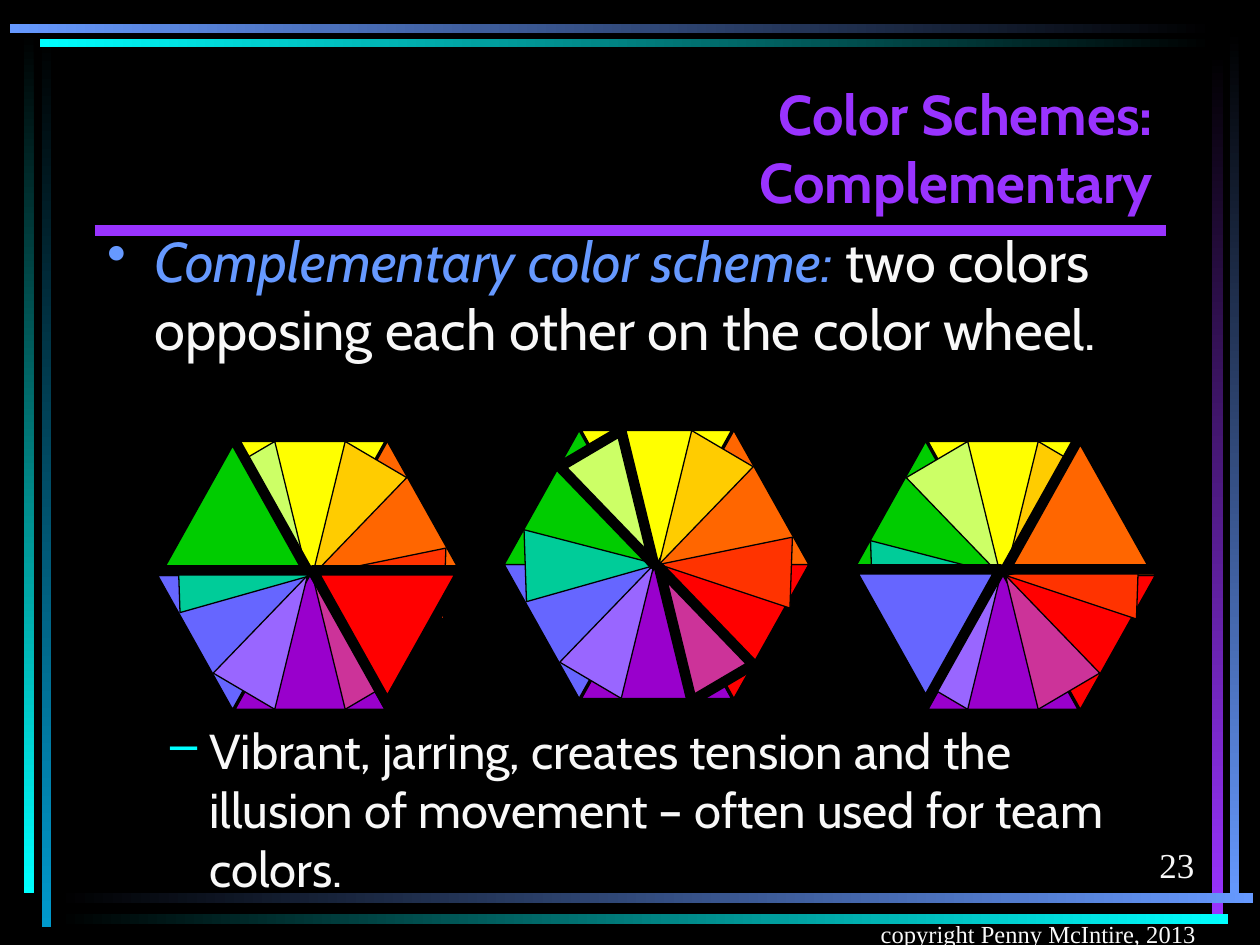
import lxml.etree
import pptx
import pptx.dml.color
import pptx.enum.shapes
import pptx.enum.text
import pptx.oxml.ns
import pptx.util
from pptx.util import Cm, Pt

SANS, SERIF = "Cabin", "Times New Roman"
BLACK, WHITE = "000000", "F8F8F8"
PURPLE, BLUE, CYAN, TEAL = "9933FF", "6699FF", "00FFFF", "0099CC"
RIGHT = pptx.enum.text.PP_ALIGN.RIGHT
BOTTOM = pptx.enum.text.MSO_ANCHOR.BOTTOM
TOP = pptx.enum.text.MSO_ANCHOR.TOP

# Triangles in cm from the wheel's centre, for the lower right quarter
SIDE = [(0.05, 0), (3.07, 0), (1.56, 2.7)]
POLE = [(-1.51, 2.7), (1.51, 2.7), (0, 0)]
MIXED = [(1.95, 1.97), (0.71, 2.7), (0.05, 0)]
MIXED_LEFT = [(-2.62, 0.75), (-2.67, -0.7), (0.03, 0)]
MIXED_RIGHT = [(2.74, -0.55), (2.69, 0.88), (0.05, 0)]

# Name: colour, triangle, mirror signs for x and y
PRIMARY = {
    "red": ("FF0000", SIDE, 1, 1),
    "yellow": ("FFFF00", POLE, 1, -1),
    "blue": ("6666FF", SIDE, -1, 1),
    "green": ("00CC00", SIDE, -1, -1),
    "orange": ("FF6600", SIDE, 1, -1),
    "purple": ("9900CC", POLE, 1, 1),
}
BLENDS = {
    "lime": ("CCFF66", MIXED, -1, -1),
    "teal": ("00CC99", MIXED_LEFT, 1, 1),
    "violet": ("9966FF", MIXED, -1, 1),
    "magenta": ("CC3399", MIXED, 1, 1),
    "vermilion": ("FF3300", MIXED_RIGHT, 1, 1),
    "amber": ("FFCC00", MIXED, 1, -1),
}
WEDGES = {**PRIMARY, **BLENDS}


def rgb(color):
    return pptx.dml.color.RGBColor.from_string(color)


class Deck:
    """Style and current slide."""

    def __init__(self):
        self.prs = pptx.Presentation()
        self.prs.slide_width, self.prs.slide_height = Cm(25.4), Cm(19.05)

    def add_slide(self, background):
        self.slide = self.prs.slides.add_slide(self.prs.slide_layouts[5])
        self.shapes = self.slide.shapes
        self.slide.background.fill.solid()
        self.slide.background.fill.fore_color.rgb = rgb(background)

    def bar(self, x, y, w, h, start, end):
        """Gradient bar running along its longer side."""
        sp = self.shapes.add_shape(
            pptx.enum.shapes.MSO_SHAPE.RECTANGLE, Cm(x), Cm(y), Cm(w), Cm(h))
        sp.shadow.inherit = False
        sp.line.fill.background()
        sp.fill.gradient()
        sp.fill.gradient_angle = 0 if w > h else 270
        for stop, position, color in zip(sp.fill.gradient_stops, (0, 1), (start, end)):
            stop.position = position
            stop.color.rgb = rgb(color)

    def line(self, x1, y1, x2, y2, color, width):
        cxn = self.shapes.add_connector(
            pptx.enum.shapes.MSO_CONNECTOR.STRAIGHT, Cm(x1), Cm(y1), Cm(x2), Cm(y2))
        cxn.line.color.rgb = rgb(color)
        cxn.line.width = Pt(width)
        lxml.etree.SubElement(
            cxn._element.spPr, pptx.oxml.ns.qn("a:effectLst"))

    def wedge(self, name, cx, cy, width):
        color, triangle, sx, sy = WEDGES[name]
        points = [(Cm(cx + sx * x), Cm(cy + sy * y)) for x, y in triangle]
        builder = self.shapes.build_freeform(*points[0])
        builder.add_line_segments(points[1:], close=True)
        sp = builder.convert_to_shape()
        sp.shadow.inherit = False
        sp.fill.solid()
        sp.fill.fore_color.rgb = rgb(color)
        sp.line.color.rgb = rgb(BLACK)
        sp.line.width = Pt(width)

    def wheel(self, cx, cy, highlights):
        for name in PRIMARY:
            self.wedge(name, cx, cy, 0.75)
        self.line(cx - 1.93, cy - 1.97, cx + 1.93, cy + 1.97, BLACK, 0.75)
        for name in BLENDS:
            self.wedge(name, cx, cy, 0.75)
        for name, dy in highlights:
            self.wedge(name, cx, cy + dy, 6)

    def frame(self, sp, x, y, w, h, anchor):
        sp.left, sp.top, sp.width, sp.height = Cm(x), Cm(y), Cm(w), Cm(h)
        tf = sp.text_frame
        tf.word_wrap = True
        tf.auto_size = pptx.enum.text.MSO_AUTO_SIZE.NONE
        tf.vertical_anchor = anchor
        return tf.paragraphs[0]

    def run(self, p, text, size, color, font=SANS, bold=False, italic=False):
        r = p.add_run()
        r.text = text
        r.font.name, r.font.size = font, Pt(size)
        r.font.bold, r.font.italic = bold, italic
        r.font.color.rgb = rgb(color)

    def title(self, lines, x, y, w, h):
        p = self.frame(self.shapes.title, x, y, w, h, BOTTOM)
        p.alignment = RIGHT
        for i, text in enumerate(lines):
            if i:
                p.add_line_break()
            self.run(p, text, 32, PURPLE, bold=True)

    def textbox(self, x, y, w, h, anchor=TOP):
        sp = self.shapes.add_textbox(Cm(x), Cm(y), Cm(w), Cm(h))
        return self.frame(sp, x, y, w, h, anchor)

    def footer(self, text, size, x, y, w, h):
        p = self.textbox(x, y, w, h, BOTTOM)
        p.alignment = RIGHT
        self.run(p, text, size, WHITE, SERIF)

    def bullet(self, p, char, color, level, margin, hanging):
        p.level = level
        pPr = p._p.get_or_add_pPr()
        pPr.set("marL", str(Cm(margin)))
        pPr.set("indent", str(-Cm(hanging)))
        qn = pptx.oxml.ns.qn
        clr = lxml.etree.SubElement(pPr, qn("a:buClr"))
        lxml.etree.SubElement(clr, qn("a:srgbClr")).set("val", color)
        lxml.etree.SubElement(pPr, qn("a:buChar")).set("char", char)


def main():
    deck = Deck()
    deck.add_slide(BLACK)

    # Frame of gradient bars: left, right, bottom, top
    for bar in [
        (0.84, 0.71, 0.2, 17.98, BLACK, TEAL),
        (0.48, 0.64, 0.2, 17.37, BLACK, CYAN),
        (24.79, 0.61, 0.18, 17.6, BLACK, BLUE),
        (24.43, 1.07, 0.23, 17.35, BLACK, PURPLE),
        (1.14, 18.01, 24.13, 0.2, BLACK, BLUE),
        (1.14, 18.42, 23.62, 0.2, BLACK, CYAN),
        (0.81, 0.79, 23.67, 0.15, CYAN, BLACK),
        (0.2, 0.48, 24.28, 0.18, BLUE, BLACK),
    ]:
        deck.bar(*bar)

    # Title and rule
    deck.title(["Color Schemes:", "Complementary"], 1.91, 1.27, 21.59, 3.18)
    deck.line(1.91, 4.65, 23.5, 4.65, PURPLE, 6)

    # Footer
    deck.footer("23", 20, 19.05, 16.71, 5.28, 1.27)
    deck.footer("copyright Penny McIntire, 2013", 14, 16.31, 17.98, 8.05, 1.27)

    # Color wheels, each with a complementary pair set off
    pairs = [
        (11.6, [("red", -0.1), ("green", -0.1)]),
        (11.38, [("lime", 0), ("magenta", 0.05)]),
        (11.6, [("blue", -0.12), ("orange", -0.12)]),
    ]
    for i, (cy, highlights) in enumerate(pairs):
        deck.wheel(6.25 + 6.985 * i, cy, highlights)

    # Definition and effect
    p = deck.textbox(1.91, 4.45, 21.59, 4.65)
    deck.bullet(p, "•", BLUE, 0, 0.95, 0.95)
    deck.run(p, "Complementary color scheme:", 32, BLUE, italic=True)
    deck.run(p, " two colors opposing each other on the color wheel.", 32, WHITE)

    p = deck.textbox(1.91, 14.4, 21.59, 3.38)
    deck.bullet(p, "–", CYAN, 1, 2.06, 0.79)
    deck.run(p, "Vibrant, jarring, creates tension and the illusion of movement"
                " – often used for team colors.", 28, WHITE)

    deck.prs.save("out.pptx")


if __name__ == "__main__":
    main()
